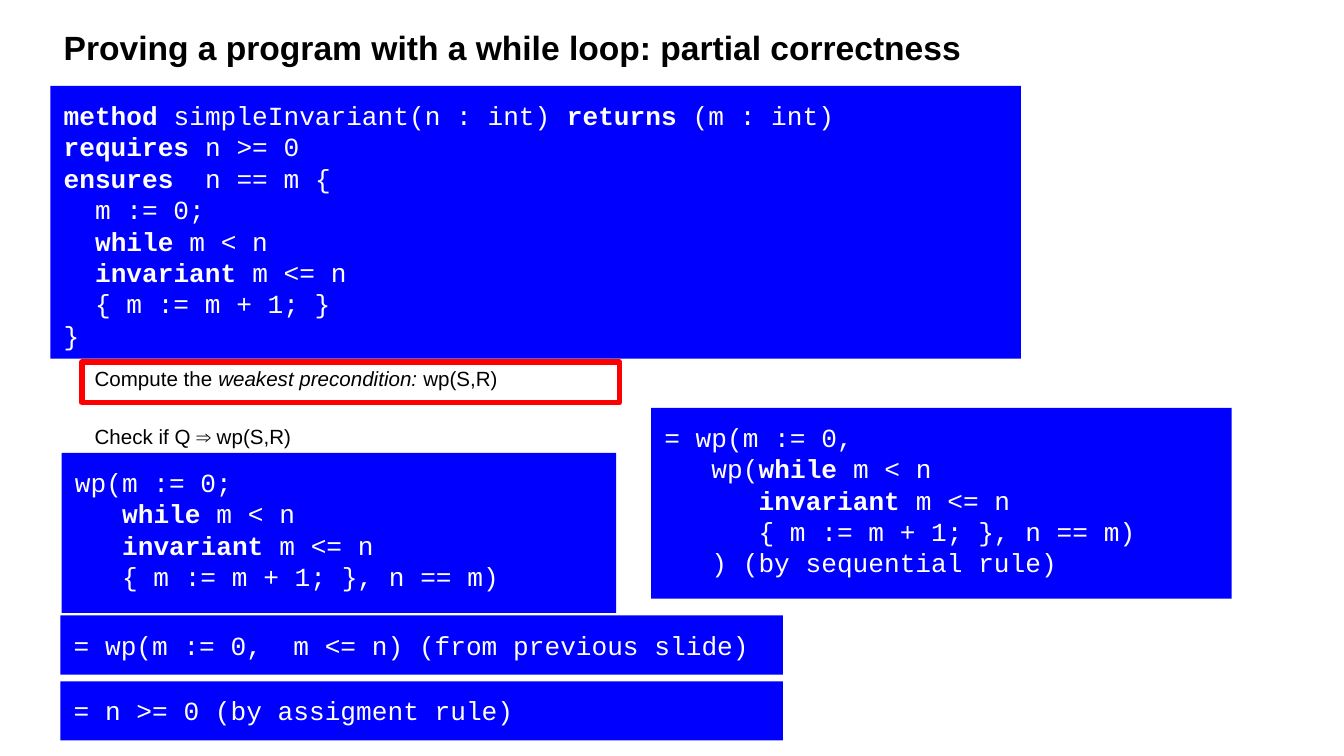
from pptx import Presentation
from pptx.dml.color import RGBColor
from pptx.enum.shapes import MSO_SHAPE
from pptx.enum.text import MSO_ANCHOR, PP_ALIGN
from pptx.util import Emu, Pt

PX = 4572
INSET = 20
BLACK = RGBColor(0, 0, 0)
WHITE = RGBColor(255, 255, 255)
BLUE = RGBColor(0, 0, 255)
RED = RGBColor(255, 0, 0)

METHOD = """*method* simpleInvariant(n : int) *returns* (m : int)
*requires* n >= 0
*ensures*  n == m {
  m := 0;
  *while* m < n
  *invariant* m <= n
  { m := m + 1; }
}"""
GOAL = """wp(m := 0;
   *while* m < n
   *invariant* m <= n
   { m := m + 1; }, n == m)"""
SEQUENTIAL = """= wp(m := 0,
   wp(*while* m < n
      *invariant* m <= n
      { m := m + 1; }, n == m)
   ) (by sequential rule)"""
LOOP_RESULT = "= wp(m := 0,  m <= n) (from previous slide)"
ASSIGNMENT_RESULT = "= n >= 0 (by assigment rule)"
STEPS = """Compute the *weakest precondition: *wp(S,R)
Check if Q ⇒ wp(S,R)"""


def to_emu(box):
    """Turn a box of px lengths into EMU."""
    return [Emu(length * PX) for length in box]


def write_text(shape, text, *, size, font="Arial", color=BLACK, bold=False,
               emphasis="bold", anchor=MSO_ANCHOR.TOP, line_spacing=None,
               space_after=None, margin=0, indent=0):
    """Write one paragraph per line, with emphasis on parts between asterisks."""
    frame = shape.text_frame
    frame.word_wrap = True
    frame.vertical_anchor = anchor
    frame.margin_left = frame.margin_right = Emu(INSET * PX)
    frame.margin_top = frame.margin_bottom = Emu(INSET * PX)
    for index, line in enumerate(text.split("\n")):
        paragraph = frame.add_paragraph() if index else frame.paragraphs[0]
        paragraph.alignment = PP_ALIGN.LEFT
        paragraph.line_spacing = line_spacing
        paragraph.space_after = space_after
        if margin:
            properties = paragraph._p.get_or_add_pPr()
            properties.set("marL", str(margin * PX))
            properties.set("indent", str(indent * PX))
        for position, part in enumerate(line.split("*")):
            if not part:
                continue
            run = paragraph.add_run()
            run.text = part
            run.font.name = font
            run.font.size = Pt(size)
            run.font.color.rgb = color
            run.font.bold = bold
            if position % 2:
                setattr(run.font, emphasis, True)


def add_rectangle(slide, box):
    """Add a plain rectangle without a shadow."""
    shape = slide.shapes.add_shape(MSO_SHAPE.RECTANGLE, *to_emu(box))
    shape.shadow.inherit = False
    return shape


def add_code(slide, box, code):
    """Add a blue panel of code."""
    panel = add_rectangle(slide, box)
    panel.fill.solid()
    panel.fill.fore_color.rgb = BLUE
    panel.line.fill.background()
    write_text(panel, code, size=14, font="Courier New", color=WHITE)


def add_title(slide, box, text):
    """Add the slide title."""
    title = slide.shapes.add_textbox(*to_emu(box))
    write_text(title, text, size=18, bold=True)


def add_steps(slide, box):
    """Add the two proof steps."""
    steps = slide.shapes.add_textbox(*to_emu(box))
    write_text(steps, STEPS, size=11, emphasis="italic",
               anchor=MSO_ANCHOR.MIDDLE, line_spacing=1.15,
               space_after=Pt(16), margin=100, indent=-66)


def add_highlight(slide, box):
    """Add the red frame around the current step."""
    highlight = add_rectangle(slide, box)
    highlight.fill.background()
    highlight.line.color.rgb = RED
    highlight.line.width = Pt(3)


def add_results(slide, box, results, pitch):
    """Stack one code panel per result, a fixed pitch apart."""
    left, top, width, height = box
    for index, result in enumerate(results):
        add_code(slide, (left, top + index * pitch, width, height), result)


def main():
    """Build and save the presentation."""
    presentation = Presentation()
    presentation.slide_width, presentation.slide_height = to_emu((2000, 1125))
    slide = presentation.slides.add_slide(presentation.slide_layouts[6])
    add_code(slide, (75, 128, 1444, 406), METHOD)
    add_title(slide, (75, 20, 1864, 126),
              "Proving a program with a while loop: partial correctness")
    add_steps(slide, (87, 543, 1036, 122))
    add_code(slide, (92, 674, 825, 238), GOAL)
    add_highlight(slide, (122, 539, 800, 60))
    add_code(slide, (969, 607, 864, 284), SEQUENTIAL)
    add_results(slide, (90, 916, 1075, 88), (LOOP_RESULT, ASSIGNMENT_RESULT), 98)
    presentation.save("out.pptx")


if __name__ == "__main__":
    main()
